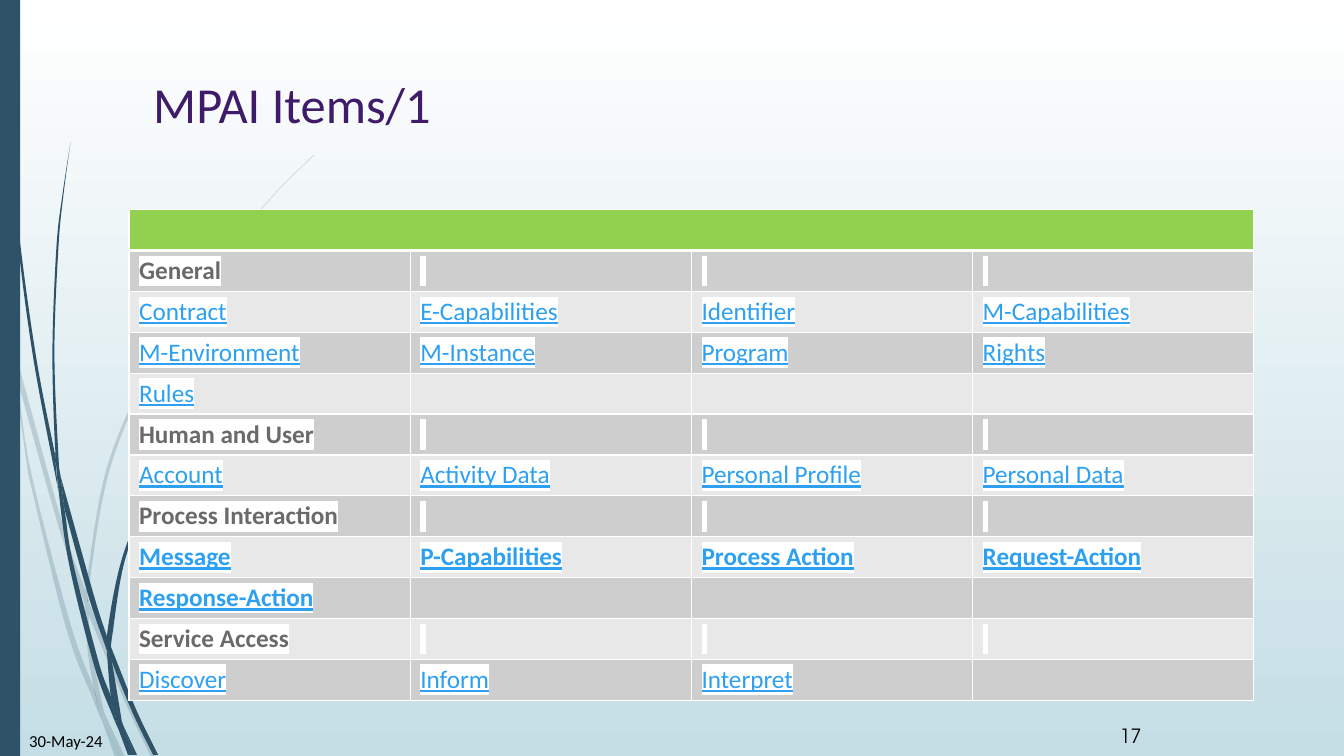
import pptx
import pptx.util
import pptx.dml.color
import pptx.enum.shapes
import pptx.enum.text
import pptx.oxml.ns
from dataclasses import dataclass
from lxml import etree

PX = 9144  # EMU in one px, a hundredth of an inch
SLIDE_SIZE = (pptx.util.Emu(12192000), pptx.util.Emu(6858000))  # 16:9


@dataclass(frozen=True)
class Theme:
    title: str = "3F1C6A"
    heading: str = "6A6A6A"
    link: str = "2DA0F1"
    text: str = "000000"
    white: str = "FFFFFF"
    sky: str = "C5DEE5"
    stem: str = "2E5369"
    header: str = "92D050"
    bands: tuple = ("CECECE", "E8E8E8")
    font: str = "Calibri"
    number_font: str = "TeX Gyre Adventor"
    title_size: int = 36
    table_size: int = 18
    date_size: int = 12
    number_size: int = 14


THEME = Theme()

# Stems: each piece is a list of smooth edges, joined by straight lines
PALE_STEMS = [
    [[(11, 350), (9, 322), (0, 282)], [(0, 299), (10, 344), (11, 350)]],
    [[(17, 376), (58, 522), (84, 599)], [(85, 586), (62, 520), (14, 345)]],
    [[(155, 751), (127, 692), (92, 607), (88, 596)], [(88, 610), (123, 694), (150, 751)]],
    [[(119, 751), (124, 751)], [(105, 711)]],
    [[(99, 707), (93, 683), (70, 619), (31, 469), (17, 376), (11, 350)],
     [(28, 470), (65, 621), (92, 693), (101, 714)]],
    [[(84, 599), (87, 646), (93, 683), (96, 692), (105, 711)],
     [(103, 706), (91, 646), (88, 610), (88, 608)]],
    [[(88, 596), (88, 584), (110, 462), (160, 349), (229, 245), (268, 198), (290, 175), (312, 154)],
     [(312, 153), (289, 175), (268, 197), (228, 244), (158, 348), (107, 461), (85, 584), (85, 586)]],
    [[(101, 714), (114, 751)], [(119, 751)]],
    [[(88, 608), (88, 610)], [(88, 596)], [(85, 586), (84, 599)]],
    [[(93, 683), (99, 707), (101, 714), (119, 751)], [(105, 711), (96, 692)]],
]
DARK_STEMS = [
    [[(3, 0), (4, 48), (7, 110), (17, 233), (33, 355), (56, 477), (57, 481)],
     [(55, 457), (55, 453), (36, 355), (19, 232), (8, 109), (5, 48), (4, 0)]],
    [[(64, 505), (88, 592), (106, 645)], [(106, 633), (106, 631), (93, 590), (60, 472)]],
    [[(110, 641), (111, 656), (132, 708), (152, 749)], [(157, 749), (136, 706), (113, 649), (110, 641)]],
    [[(57, 477), (68, 557), (93, 659), (111, 708), (117, 722)],
     [(116, 717), (110, 691), (98, 657), (72, 556), (64, 505), (57, 477)]],
    [[(60, 472), (58, 453), (54, 349), (58, 245), (63, 193), (70, 141)],
     [(70, 141), (62, 193), (56, 245), (52, 349), (55, 449), (60, 472)]],
    [[(133, 749), (136, 749)], [(122, 719)]],
    [[(57, 477), (64, 505)], [(60, 472), (55, 449), (55, 453)]],
    [[(111, 633), (125, 552), (158, 476), (205, 406), (231, 374), (245, 359), (261, 344)],
     [(260, 344), (245, 358), (231, 373), (204, 405), (156, 474), (122, 551), (106, 631), (110, 641)]],
    [[(117, 722), (127, 749)], [(131, 749)]],
    [[(106, 645), (110, 691), (116, 706), (122, 719)], [(121, 716), (111, 656), (109, 651)]],
    [[(106, 645), (109, 651), (111, 656)], [(110, 641), (106, 631)]],
    [[(110, 691), (116, 717), (117, 722), (130, 749)], [(133, 749), (122, 719), (116, 706)]],
]

# Table rows: style, then the texts from the left
ITEM_ROWS = [
    ("heading", "General"),
    ("link", "Contract", "E-Capabilities", "Identifier", "M-Capabilities"),
    ("link", "M-Environment", "M-Instance", "Program", "Rights"),
    ("link", "Rules"),
    ("heading", "Human and User"),
    ("link", "Account", "Activity Data", "Personal Profile", "Personal Data"),
    ("heading", "Process Interaction"),
    ("bold link", "Message", "P-Capabilities", "Process Action", "Request-Action"),
    ("bold link", "Response-Action"),
    ("heading", "Service Access"),
    ("link", "Discover", "Inform", "Interpret"),
]
ROW_FORMATS = {
    "heading": dict(color=THEME.heading, bold=True),
    "link": dict(color=THEME.link, underline=True),
    "bold link": dict(color=THEME.link, underline=True, bold=True),
}


def rgb(color):
    return pptx.dml.color.RGBColor.from_string(color)


def emu(box):
    return [length * PX for length in box]


def add_xml(parent, tag, **attributes):
    return etree.SubElement(parent, pptx.oxml.ns.qn(tag), attributes)


def write_text(frame, text, size, color, font=THEME.font, bold=False, underline=False, highlight=None):
    run = frame.paragraphs[0].add_run()
    run.text = text
    run.font.size = pptx.util.Pt(size)
    run.font.bold = bold
    run.font.underline = underline
    run.font.color.rgb = rgb(color)
    if highlight:
        marker = add_xml(run.font._element, "a:highlight")
        add_xml(marker, "a:srgbClr", val=highlight)
    run.font.name = font


def paint(shape, color, opacity=100):
    shape.shadow.inherit = False
    shape.line.fill.background()
    shape.fill.solid()
    shape.fill.fore_color.rgb = rgb(color)
    if opacity < 100:
        for element in shape._element.spPr.iter(pptx.oxml.ns.qn("a:srgbClr")):
            add_xml(element, "a:alpha", val=str(opacity * 1000))


def curve_edges(shape, edges):
    """Turn the straight segments within each edge into Bezier curves."""
    segments = iter(list(shape._element.iter(pptx.oxml.ns.qn("a:lnTo"))))
    for index, edge in enumerate(edges):
        if index:
            next(segments)  # straight joint between two edges
        padded = [edge[0], *edge, edge[-1]]
        for before, start, end, after in zip(padded, padded[1:], padded[2:], padded[3:]):
            segment = next(segments)
            curve = etree.Element(pptx.oxml.ns.qn("a:cubicBezTo"))
            controls = ([s + (e - b) / 6 for b, s, e in zip(before, start, end)],
                        [e - (a - s) / 6 for s, e, a in zip(start, end, after)])
            for x, y in controls:
                add_xml(curve, "a:pt", x=str(round(x * PX) - shape.left), y=str(round(y * PX) - shape.top))
            curve.extend(list(segment))
            segment.getparent().replace(segment, curve)


def draw_stems(slide, stems, opacity):
    for edges in stems:
        points = [tuple(emu(point)) for edge in edges for point in edge]
        builder = slide.shapes.build_freeform(*points[0], scale=1.0)
        builder.add_line_segments(points[1:], close=True)
        stem = builder.convert_to_shape()
        curve_edges(stem, edges)
        paint(stem, THEME.stem, opacity)


def draw_backdrop(slide, box):
    # Gradient from top to bottom
    fill = slide.background.fill
    fill.gradient()
    fill.gradient_angle = 270
    for stop, color, position in zip(fill.gradient_stops, (THEME.white, THEME.sky), (0, 1)):
        stop.color.rgb = rgb(color)
        stop.position = position
    # Stems and the bar at the left edge
    draw_stems(slide, PALE_STEMS, 20)
    draw_stems(slide, DARK_STEMS, 100)
    bar = slide.shapes.add_shape(pptx.enum.shapes.MSO_SHAPE.RECTANGLE, *emu(box))
    paint(bar, THEME.stem)


def draw_title(slide, box, text):
    title = slide.shapes.title
    title.left, title.top, title.width, title.height = emu(box)
    frame = title.text_frame
    frame.vertical_anchor = pptx.enum.text.MSO_ANCHOR.TOP
    frame.paragraphs[0].alignment = pptx.enum.text.PP_ALIGN.LEFT
    write_text(frame, text, THEME.title_size, THEME.title)


def format_cell(cell, color, bottom=1):
    properties = cell._tc.get_or_add_tcPr()
    for side, width in (("L", 1), ("R", 1), ("T", 1), ("B", bottom)):
        line = add_xml(properties, f"a:ln{side}", w=str(pptx.util.Pt(width)))
        add_xml(add_xml(line, "a:solidFill"), "a:srgbClr", val=THEME.white)
    cell.fill.solid()
    cell.fill.fore_color.rgb = rgb(color)
    cell.vertical_anchor = pptx.enum.text.MSO_ANCHOR.MIDDLE


def draw_items(slide, box, columns=4):
    table = slide.shapes.add_table(len(ITEM_ROWS) + 1, columns, *emu(box)).table
    # Header band
    for cell in table.rows[0].cells:
        format_cell(cell, THEME.header, bottom=3)
    table.cell(0, 0).merge(table.cell(0, columns - 1))
    # Item rows; headings carry a highlighted space in the other columns
    for row, (style, *texts) in enumerate(ITEM_ROWS, start=1):
        if style == "heading":
            texts += [" "] * (columns - 1)
        for column in range(columns):
            cell = table.cell(row, column)
            format_cell(cell, THEME.bands[(row - 1) % 2])
            if column < len(texts):
                write_text(cell.text_frame, texts[column], THEME.table_size,
                           highlight=THEME.white, **ROW_FORMATS[style])


def draw_note(slide, box, text, inset=5, **text_format):
    frame = slide.shapes.add_textbox(*emu(box)).text_frame
    frame.word_wrap = True
    frame.margin_top = frame.margin_bottom = inset * PX
    write_text(frame, text, color=THEME.text, **text_format)


def main():
    presentation = pptx.Presentation()
    presentation.slide_width, presentation.slide_height = SLIDE_SIZE
    slide = presentation.slides.add_slide(presentation.slide_layouts[5])
    draw_backdrop(slide, (0, 0, 20, 750))
    draw_title(slide, (142, 68, 1116, 140), "MPAI Items/1")
    draw_items(slide, (128, 208, 1116, 487))
    draw_note(slide, (19, 720, 109, 40), "30-May-24", size=THEME.date_size)
    draw_note(slide, (1101, 718, 61, 5), "17", inset=0, size=THEME.number_size, font=THEME.number_font)
    presentation.save("out.pptx")


if __name__ == "__main__":
    main()
